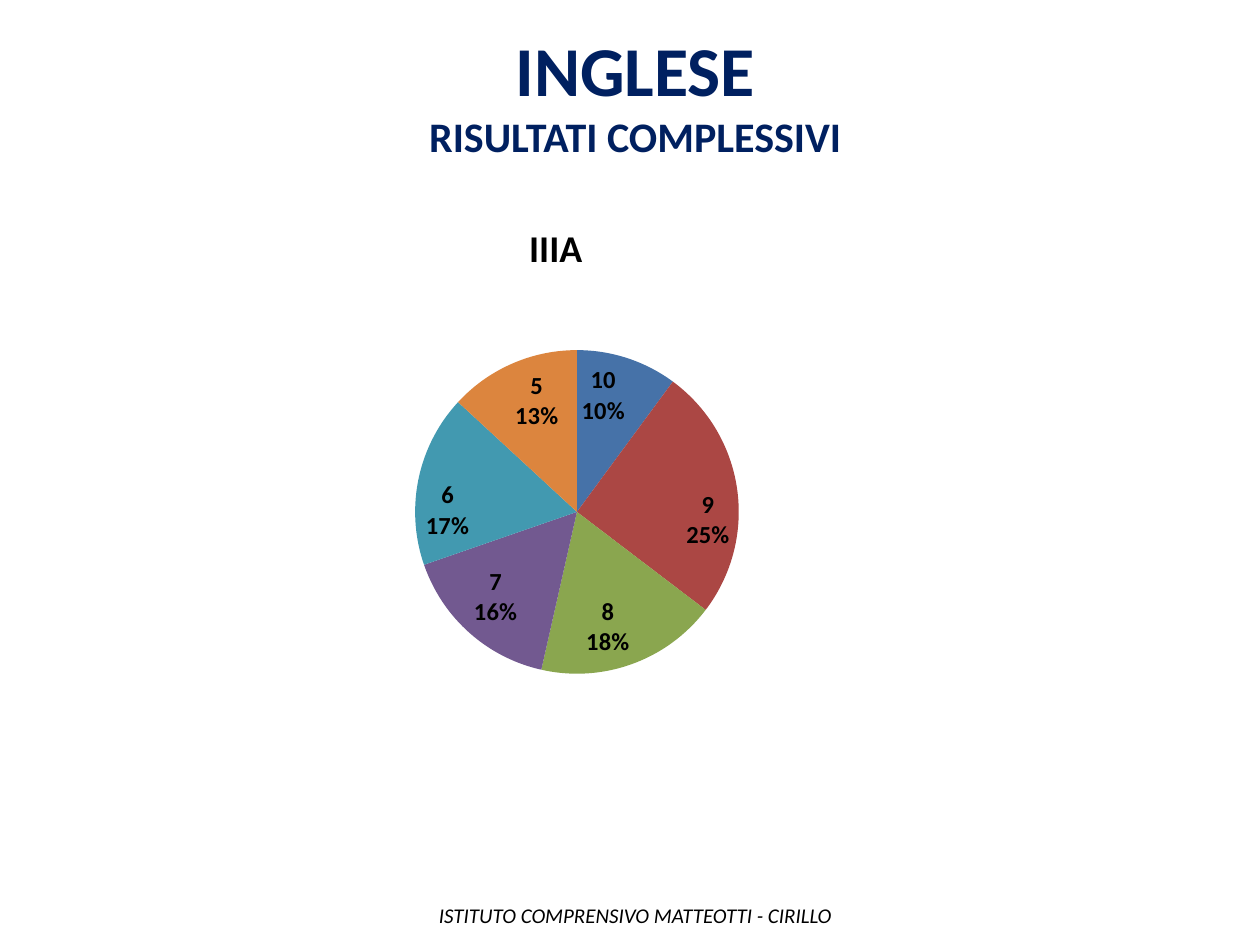
from lxml.etree import Element, SubElement
from pptx import Presentation
from pptx.chart.data import CategoryChartData
from pptx.dml.color import RGBColor
from pptx.enum.chart import XL_CHART_TYPE, XL_LABEL_POSITION
from pptx.enum.text import PP_ALIGN
from pptx.oxml.ns import qn
from pptx.util import Pt

FONT = "Calibri"
NAVY = "002060"
BLACK = "000000"


def set_font(font, size, color, bold=False, italic=False):
    font.name, font.size = FONT, Pt(size)
    font.bold, font.italic = bold, italic
    font.color.rgb = RGBColor.from_string(color)


def add_text_box(slide, box, wrap=True):
    tf = slide.shapes.add_textbox(*map(Pt, box)).text_frame
    tf.word_wrap = wrap
    return tf


def add_heading(slide, box):
    tf = add_text_box(slide, box)
    for i, (text, size) in enumerate([("INGLESE", 40), ("RISULTATI COMPLESSIVI", 24)]):
        p = tf.add_paragraph() if i else tf.paragraphs[0]
        p.text, p.alignment = text, PP_ALIGN.CENTER
        set_font(p.font, size, NAVY, bold=True)


def add_footer(slide, box):
    p = add_text_box(slide, box, wrap=False).paragraphs[0]
    p.text = " ISTITUTO COMPRENSIVO MATTEOTTI - CIRILLO"
    set_font(p.font, 12, BLACK, italic=True)


def make_layout(**fractions):
    """Return a c:layout that places a chart part by fractions of the chart."""
    layout = Element(qn("c:layout"))
    manual = SubElement(layout, qn("c:manualLayout"))
    if "w" in fractions:
        SubElement(manual, qn("c:layoutTarget"), val="inner")
    for axis in "xy":
        SubElement(manual, qn(f"c:{axis}Mode"), val="edge")
    for key, value in fractions.items():
        SubElement(manual, qn(f"c:{key}"), val=str(value))
    return layout


def replace_layout(parent, layout, after=None):
    for old in parent.findall(qn("c:layout")):
        parent.remove(old)
    if after is None:
        parent.insert(0, layout)
    else:
        after.addnext(layout)


def add_grade_pie(slide, box):
    data = CategoryChartData()
    data.categories = ["10", "9", "8", "7", "6", "5", "4"]
    data.add_series("IIIA", [10, 25, 18, 16, 17, 13, None])
    chart = slide.shapes.add_chart(XL_CHART_TYPE.PIE, *map(Pt, box), data).chart
    set_font(chart.font, 18, BLACK)
    chart.has_legend = False

    chart.has_title = True
    title = chart.chart_title
    p = title.text_frame.paragraphs[0]
    p.text = "IIIA"
    set_font(p.font, 21.6, BLACK, bold=True)
    title.include_in_layout = False
    title_xml = title._element
    replace_layout(title_xml, make_layout(x=0.47, y=0.05), title_xml.find(qn("c:tx")))

    # Slices take the theme accents in turn
    plot = chart.plots[0]
    plot.vary_by_categories = True
    replace_layout(plot._element.getparent(), make_layout(x=0.36, y=0.29, w=0.33, h=0.57))

    labels = plot.series[0].data_labels
    set_font(labels.font, 14, BLACK, bold=True)
    labels.show_value = False
    labels.show_category_name = labels.show_percentage = True
    labels.position = XL_LABEL_POSITION.INSIDE_END
    separator = Element(qn("c:separator"))
    separator.text = "\n"
    labels._element.find(qn("c:showBubbleSize")).addnext(separator)


def main():
    prs = Presentation()
    prs.slide_width, prs.slide_height = Pt(720), Pt(540)
    slide = prs.slides.add_slide(prs.slide_layouts[6])
    add_heading(slide, (99.5, 11.5, 527, 85))
    add_footer(slide, (241, 512, 248.5, 21.5))
    add_grade_pie(slide, (31, 106, 569, 324.5))
    prs.save("out.pptx")


if __name__ == "__main__":
    main()
